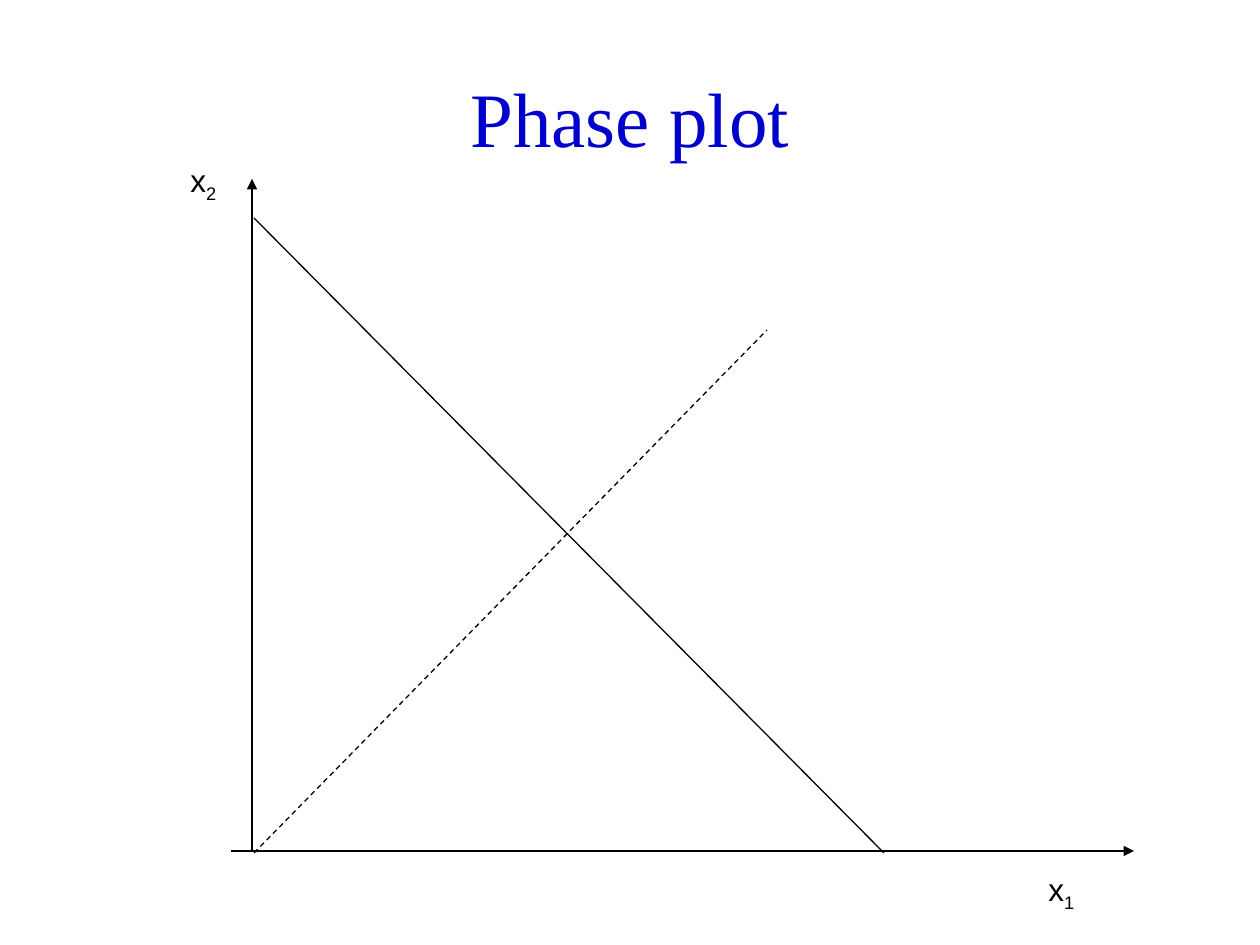
from dataclasses import dataclass

from lxml import etree
from pptx import Presentation
from pptx.dml.color import RGBColor
from pptx.enum.dml import MSO_LINE
from pptx.enum.shapes import MSO_CONNECTOR
from pptx.enum.text import MSO_ANCHOR, MSO_AUTO_SIZE, PP_ALIGN
from pptx.oxml.ns import qn
from pptx.util import Emu, Pt

STRAIGHT = MSO_CONNECTOR.STRAIGHT
DASH = MSO_LINE.DASH
MIDDLE = MSO_ANCHOR.MIDDLE
FIT_SHAPE = MSO_AUTO_SIZE.SHAPE_TO_FIT_TEXT
CENTER = PP_ALIGN.CENTER

EMU_PER_PX = 914400 / 126
COLORS = {"title": "0000CC", "ink": "000000"}


@dataclass
class Line:
    start: tuple[int, int]
    end: tuple[int, int]
    arrow: bool = False
    dashed: bool = False


@dataclass
class AxisLabel:
    left: int
    top: int
    subscript: str


LINES = [
    Line((231, 851), (1134, 851), arrow=True),   # x1 axis
    Line((252, 851), (252, 179), arrow=True),    # x2 axis
    Line((254, 218), (884, 853)),                # falling line
    Line((254, 853), (767, 330), dashed=True),   # rising line
]
LABELS = [AxisLabel(1036, 864, "1"), AxisLabel(178, 155, "2")]


def px(n: int) -> Emu:
    return Emu(round(n * EMU_PER_PX))


def add_run(p, text: str, font: str, size: int, color: str):
    r = p.add_run()
    r.text = text
    r.font.name = font
    r.font.size = Pt(size)
    r.font.color.rgb = RGBColor.from_string(COLORS[color])
    return r


def add_title(s, text: str) -> None:
    tf = s.shapes.add_textbox(px(63), px(38), px(1134), px(157)).text_frame
    tf.word_wrap = True
    tf.vertical_anchor = MIDDLE
    p = tf.paragraphs[0]
    p.alignment = CENTER
    add_run(p, text, "Times New Roman", 44, "title")


def add_line(s, line: Line) -> None:
    sp = s.shapes.add_connector(STRAIGHT, *map(px, line.start + line.end))
    sp.line.color.rgb = RGBColor.from_string(COLORS["ink"])
    sp.line.width = Pt(0.75)
    if line.dashed:
        sp.line.dash_style = DASH
    sp_pr = sp._element.spPr
    if line.arrow:
        etree.SubElement(sp_pr.find(qn("a:ln")), qn("a:tailEnd"), type="triangle")
    etree.SubElement(sp_pr, qn("a:effectLst"))


def add_axis_label(s, label: AxisLabel) -> None:
    tf = s.shapes.add_textbox(px(label.left), px(label.top), px(53), px(50)).text_frame
    tf.word_wrap = False
    tf.auto_size = FIT_SHAPE
    p = tf.paragraphs[0]
    add_run(p, "x", "Arial", 18, "ink")
    r = add_run(p, label.subscript, "Arial", 18, "ink")
    r._r.get_or_add_rPr().set("baseline", "-25000")


def main() -> None:
    prs = Presentation()
    prs.slide_width, prs.slide_height = px(1260), px(945)
    s = prs.slides.add_slide(prs.slide_layouts[6])

    add_title(s, "Phase plot")

    # Axes and lines
    for line in LINES:
        add_line(s, line)

    # Axis names
    for label in LABELS:
        add_axis_label(s, label)

    prs.save("out.pptx")


if __name__ == "__main__":
    main()
